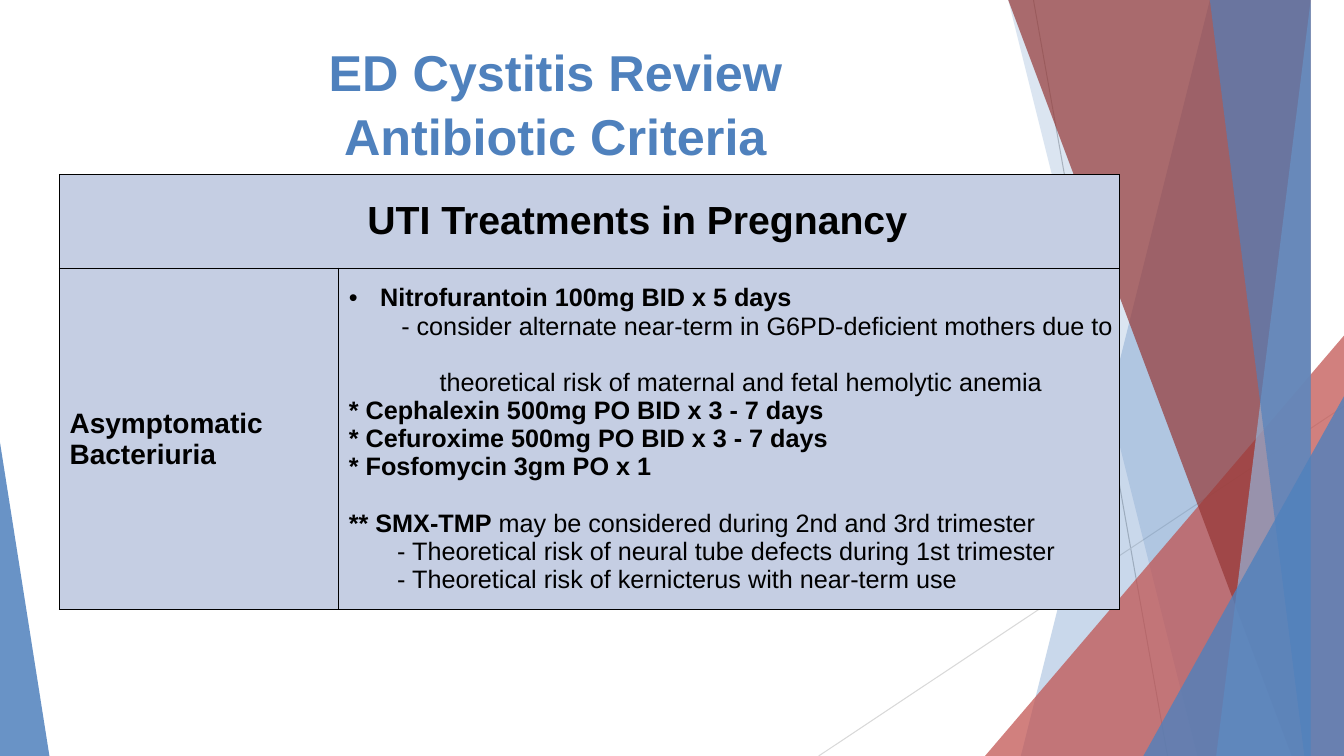
from dataclasses import dataclass

from lxml import etree
from pptx import Presentation
from pptx.dml.color import RGBColor
from pptx.enum.shapes import MSO_CONNECTOR, MSO_SHAPE
from pptx.enum.text import MSO_ANCHOR, PP_ALIGN
from pptx.oxml.ns import qn
from pptx.util import Inches, Pt

STRAIGHT = MSO_CONNECTOR.STRAIGHT
TRIANGLE = MSO_SHAPE.ISOSCELES_TRIANGLE
MIDDLE = MSO_ANCHOR.MIDDLE
CENTER = PP_ALIGN.CENTER
WIDTH, HEIGHT = 13.33, 7.5


@dataclass(frozen=True)
class Theme:
    font: str = "Arial"
    blue: str = "4F81BD"
    pale: str = "95B3D7"
    red: str = "C0504D"
    dark: str = "953735"
    black: str = "000000"
    cell: str = "C5CEE3"
    title: int = 36
    head: int = 28
    label: int = 20
    body: int = 18


THEME = Theme()

# Start and end of each thin line, and its colour
RAYS = [
    ((10.25, 0), (11.58, HEIGHT), "BFBFBF"),
    ((WIDTH, 4.03), (8.12, HEIGHT), "D9D9D9"),
]
# Left edge at top and bottom (bands), or box and tip (wedges); colour, opacity
FACETS = [
    ("band", (12.28, 10.04), THEME.blue, 30),
    ("band", (10.5, 11.83), THEME.blue, 20),
    ("wedge", (9.77, 3.33, 3.56, 4.17, 1), THEME.red, 72),
    ("band", (10.21, 12.91), THEME.dark, 70),
    ("band", (13.03, 11.92), THEME.pale, 70),
    ("band", (11.96, 13.18), THEME.blue, 65),
    ("wedge", (11.34, 3.93, 1.99, 3.57, 1), THEME.blue, 80),
    ("wedge", (0, 4.39, 0.49, 3.11, 0), THEME.blue, 85),
]
# Bold text, plain text, indent, space before in points
DOSES = [
    ("Nitrofurantoin 100mg BID x 5 days", "", 0.31, 0),
    ("", "- consider alternate near-term in G6PD-deficient mothers due to", 0.52, 0),
    ("", "theoretical risk of maternal and fetal hemolytic anemia", 0.9, 20),
    ("* Cephalexin 500mg PO BID x 3 - 7 days", "", 0, 0),
    ("* Cefuroxime 500mg PO BID x 3 - 7 days", "", 0, 0),
    ("* Fosfomycin 3gm PO x 1", "", 0, 0),
    ("** SMX-TMP", " may be considered during 2nd and 3rd trimester", 0, 20),
    ("", "- Theoretical risk of neural tube defects during 1st trimester", 0.48, 0),
    ("", "- Theoretical risk of kernicterus with near-term use", 0.48, 0),
]


def style(run, size, color=THEME.black, bold=True):
    font = run.font
    font.name, font.size, font.bold = THEME.font, Pt(size), bold
    font.color.rgb = RGBColor.from_string(color)


def add_ray(slide, start, end, color):
    ray = slide.shapes.add_connector(STRAIGHT, *map(Inches, start + end))
    ray.line.color.rgb = RGBColor.from_string(color)
    ray.line.width = Pt(0.75)
    etree.SubElement(ray._element.spPr, qn("a:effectLst"))


def add_band(slide, top, bottom):
    """Draw an area from a slanted left edge to the slide's right side."""
    form = slide.shapes.build_freeform(top, 0, scale=Inches(1))
    form.add_line_segments([(WIDTH, 0), (WIDTH, HEIGHT), (bottom, HEIGHT)])
    return form.convert_to_shape()


def add_wedge(slide, left, top, width, height, tip):
    wedge = slide.shapes.add_shape(TRIANGLE, *map(Inches, (left, top, width, height)))
    wedge.adjustments[0] = tip
    return wedge


def add_facets(slide):
    makers = {"band": add_band, "wedge": add_wedge}
    for ray in RAYS:
        add_ray(slide, *ray)
    for kind, place, color, alpha in FACETS:
        facet = makers[kind](slide, *place)
        facet.shadow.inherit = False
        facet.line.fill.background()
        facet.fill.solid()
        facet.fill.fore_color.rgb = RGBColor.from_string(color)
        tint = facet._element.spPr.find(qn("a:solidFill"))[0]
        etree.SubElement(tint, qn("a:alpha"), val=str(alpha * 1000))


def add_title(slide, left, top, width, height):
    title = slide.shapes.title
    title.left, title.top = Inches(left), Inches(top)
    title.width, title.height = Inches(width), Inches(height)
    frame = title.text_frame
    frame.text = "ED Cystitis Review\vAntibiotic Criteria"
    frame.vertical_anchor = MIDDLE
    para = frame.paragraphs[0]
    para.alignment, para.line_spacing = CENTER, 1.05
    for run in para.runs:
        style(run, THEME.title, THEME.blue)


def dress(cell):
    """Give a cell its borders, fill and insets."""
    props = cell._tc.get_or_add_tcPr()
    for side in ("lnL", "lnR", "lnT", "lnB"):
        line = etree.SubElement(props, qn(f"a:{side}"), w=str(Pt(1)))
        fill = etree.SubElement(line, qn("a:solidFill"))
        etree.SubElement(fill, qn("a:srgbClr"), val=THEME.black)
    cell.fill.solid()
    cell.fill.fore_color.rgb = RGBColor.from_string(THEME.cell)
    cell.vertical_anchor = MIDDLE
    cell.margin_left = Inches(0.1)
    cell.margin_right = cell.margin_top = cell.margin_bottom = 0


def fill_doses(frame):
    for i, (strong, plain, indent, before) in enumerate(DOSES):
        para = frame.add_paragraph() if i else frame.paragraphs[0]
        para.space_before = Pt(before)
        for text, bold in ((strong, True), (plain, False)):
            if text:
                run = para.add_run()
                run.text = text
                style(run, THEME.body, bold=bold)
        props = para._p.get_or_add_pPr()
        props.set("marL", str(Inches(indent)))
        props.set("indent", "0")
    first = frame.paragraphs[0]._p.pPr
    first.set("indent", str(-Inches(0.31)))
    etree.SubElement(first, qn("a:buFont"), typeface=THEME.font)
    etree.SubElement(first, qn("a:buChar"), char="•")


def add_doses(slide, left, top, width, height):
    frame = slide.shapes.add_table(2, 2, *map(Inches, (left, top, width, height)))
    table = frame.table
    table.first_row = table.horz_banding = False
    label, head = 2.77, 0.93
    for col, size in zip(table.columns, (label, width - label)):
        col.width = Inches(size)
    for row, size in zip(table.rows, (head, height - head)):
        row.height = Inches(size)
    for cell in table.iter_cells():
        dress(cell)
    banner = table.cell(0, 0)
    banner.merge(table.cell(0, 1))
    banner.margin_left = Inches(0.95)
    words = (
        (banner, "UTI Treatments in Pregnancy", THEME.head),
        (table.cell(1, 0), "Asymptomatic Bacteriuria", THEME.label),
    )
    for cell, text, size in words:
        cell.text_frame.text = text
        style(cell.text_frame.paragraphs[0].runs[0], size)
    banner.text_frame.paragraphs[0].alignment = CENTER
    fill_doses(table.cell(1, 1).text_frame)


def main():
    deck = Presentation()
    deck.slide_width, deck.slide_height = Inches(WIDTH), Inches(HEIGHT)
    slide = deck.slides.add_slide(deck.slide_layouts[5])
    add_facets(slide)
    add_title(slide, 0.81, 0.29, 9.4, 1.44)
    add_doses(slide, 0.59, 1.73, 10.51, 4.32)
    deck.save("out.pptx")


if __name__ == "__main__":
    main()
